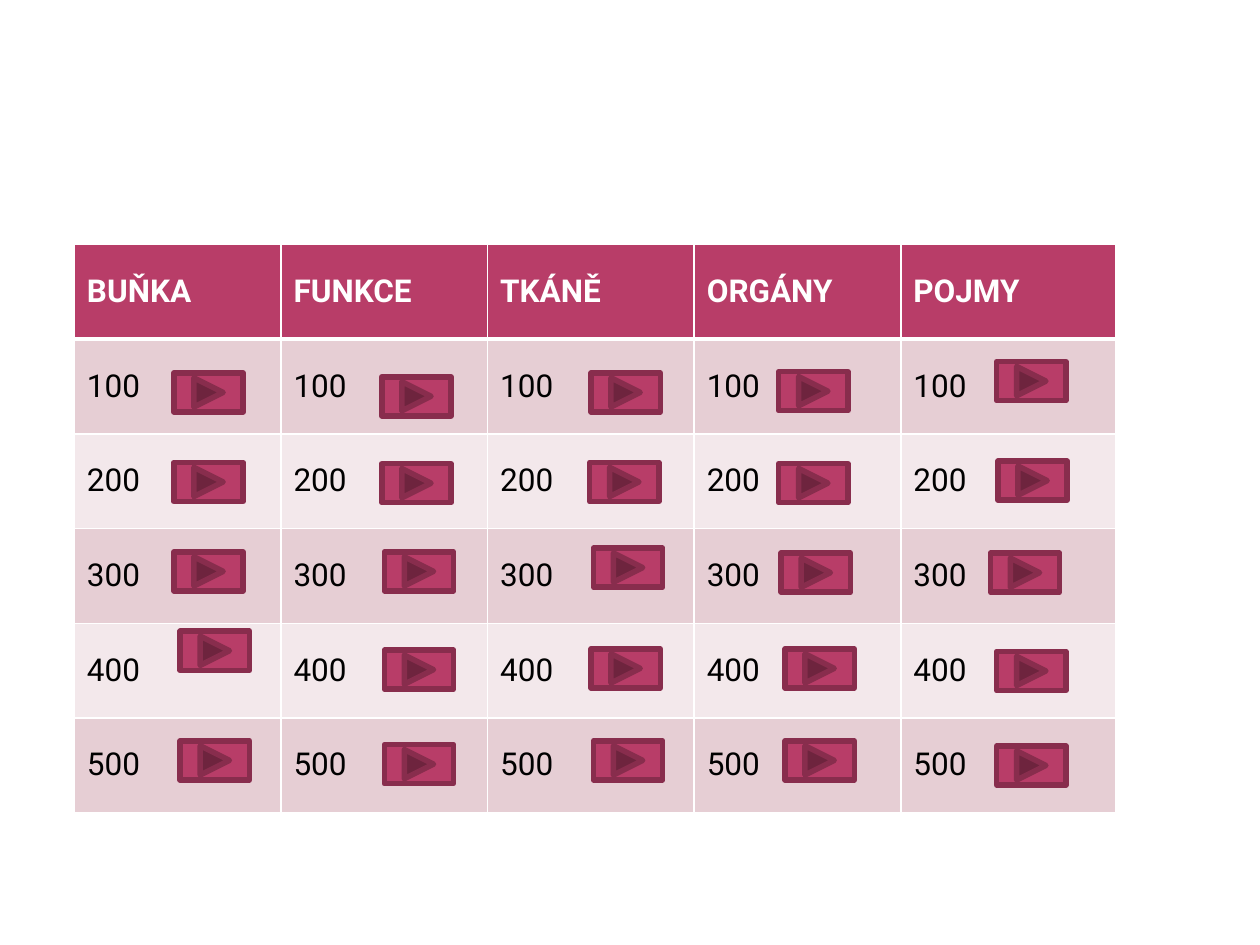
from dataclasses import dataclass

import pptx
import pptx.dml.color
import pptx.enum.shapes
import pptx.enum.text
import pptx.oxml
import pptx.oxml.ns
import pptx.util

RGBColor = pptx.dml.color.RGBColor

WHITE = RGBColor(0xFF, 0xFF, 0xFF)
BLACK = RGBColor(0x00, 0x00, 0x00)
RASPBERRY = RGBColor(0xB8, 0x3D, 0x68)
DARK_RASPBERRY = RGBColor(0x88, 0x2D, 0x4D)
BANDS = (RGBColor(0xE6, 0xCE, 0xD4), RGBColor(0xF3, 0xE8, 0xEB))

FONT = "Roboto"
GRID_COLUMNS = 1000
UNIT = pptx.util.Inches(10) // GRID_COLUMNS
POINTS = (100, 200, 300, 400, 500)
BOARD_LEFT, BOARD_TOP, BOARD_HEIGHT = 59, 194, 451
BUTTON_WIDTH, BUTTON_HEIGHT = 55, 31


@dataclass(frozen=True)
class Category:
    title: str
    width: int
    buttons: tuple[tuple[int, int], ...]


CATEGORIES = (
    Category("BUŇKA", 164, ((138, 296), (138, 367), (138, 438), (143, 501), (143, 588))),
    Category("FUNKCE", 164, ((303, 299), (303, 368), (305, 438), (305, 516), (305, 591))),
    Category("TKÁNĚ", 164, ((469, 296), (468, 367), (471, 435), (469, 515), (471, 588))),
    Category("ORGÁNY", 164, ((618, 295), (618, 368), (620, 439), (623, 515), (623, 588))),
    Category("POJMY", 171, ((791, 287), (792, 366), (786, 439), (791, 517), (791, 592))),
)


def set_border(cell, side: str, width: float) -> None:
    ln = pptx.oxml.parse_xml(
        f'<a:ln{side} {pptx.oxml.ns.nsdecls("a")} w="{pptx.util.Pt(width)}">'
        f'<a:solidFill><a:srgbClr val="{WHITE}"/></a:solidFill></a:ln{side}>'
    )
    cell._tc.get_or_add_tcPr().append(ln)


def fill_cell(cell, text: str, row: int) -> None:
    header = row == 0
    widths = {"L": 1, "R": 1, "T": 3 if row == 1 else 1, "B": 3 if header else 1}
    for side, width in widths.items():
        set_border(cell, side, width)
    cell.fill.solid()
    cell.fill.fore_color.rgb = RASPBERRY if header else BANDS[(row - 1) % 2]
    cell.vertical_anchor = pptx.enum.text.MSO_ANCHOR.MIDDLE
    cell.text_frame.text = text
    r = cell.text_frame.paragraphs[0].runs[0]
    r.font.name = FONT
    r.font.size = pptx.util.Pt(18)
    r.font.bold = header
    r.font.color.rgb = WHITE if header else BLACK


def add_board(s) -> None:
    width = sum(category.width for category in CATEGORIES)
    table = s.shapes.add_table(
        len(POINTS) + 1, len(CATEGORIES),
        BOARD_LEFT * UNIT, BOARD_TOP * UNIT, width * UNIT, BOARD_HEIGHT * UNIT,
    ).table
    for column, category in enumerate(CATEGORIES):
        table.columns[column].width = category.width * UNIT
        for row, text in enumerate((category.title, *map(str, POINTS))):
            fill_cell(table.cell(row, column), text, row)


def add_button(s, left: int, top: int) -> None:
    sp = s.shapes.add_shape(
        pptx.enum.shapes.MSO_SHAPE.ACTION_BUTTON_FORWARD_OR_NEXT,
        left * UNIT, top * UNIT, BUTTON_WIDTH * UNIT, BUTTON_HEIGHT * UNIT,
    )
    sp.shadow.inherit = False
    sp.fill.solid()
    sp.fill.fore_color.rgb = RASPBERRY
    sp.line.color.rgb = DARK_RASPBERRY
    sp.line.width = pptx.util.Pt(3.15)
    sp.line._get_or_add_ln().append(
        pptx.oxml.parse_xml(f'<a:round {pptx.oxml.ns.nsdecls("a")}/>')
    )


def main() -> None:
    prs = pptx.Presentation()
    prs.slide_width = pptx.util.Inches(10)
    prs.slide_height = pptx.util.Inches(7.5)
    s = prs.slides.add_slide(prs.slide_layouts[6])
    add_board(s)
    for category in CATEGORIES:
        for left, top in category.buttons:
            add_button(s, left, top)
    prs.save("out.pptx")


if __name__ == "__main__":
    main()
